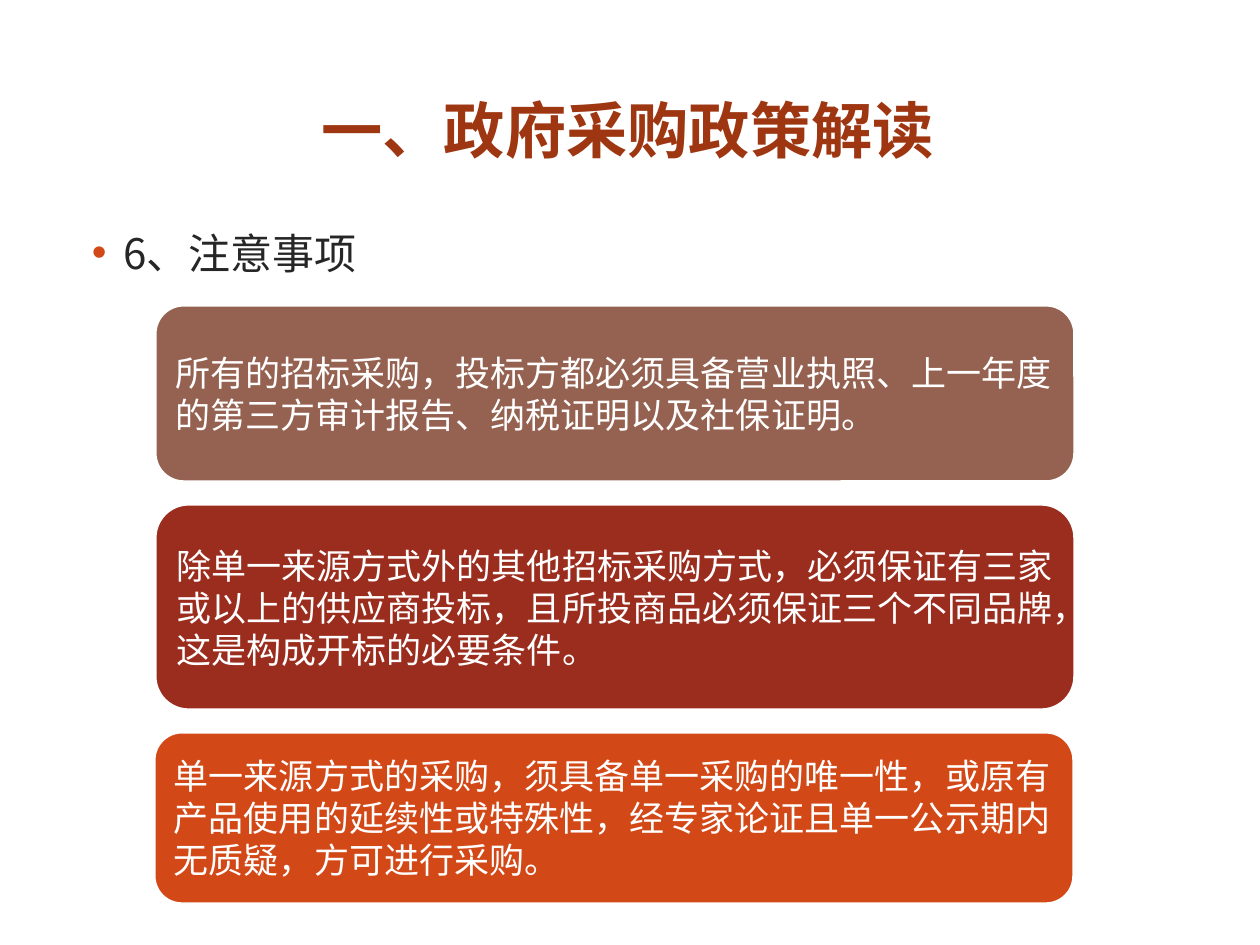
from dataclasses import dataclass

import pptx
import pptx.dml.color
import pptx.enum.shapes
import pptx.enum.text
import pptx.oxml.ns
import pptx.util
from lxml import etree

RGBColor = pptx.dml.color.RGBColor
PP_ALIGN = pptx.enum.text.PP_ALIGN
ANCHOR = pptx.enum.text.MSO_ANCHOR
SHAPE = pptx.enum.shapes.MSO_SHAPE
qn = pptx.oxml.ns.qn

EMU_PER_PX = 914400 / 126
FONT = "Noto Sans CJK SC"
WHITE = RGBColor(0xFF, 0xFF, 0xFF)
RUST = RGBColor(0x9E, 0x36, 0x11)
INK = RGBColor(0x26, 0x26, 0x26)
ORANGE = RGBColor(0xD3, 0x48, 0x17)
BROWN = RGBColor(0x95, 0x62, 0x51)
CRIMSON = RGBColor(0x9B, 0x2D, 0x1F)


@dataclass
class Panel:
    left: int
    top: int
    width: int
    height: int
    kind: SHAPE = SHAPE.RECTANGLE
    opacity: int = 100


@dataclass
class Notice:
    left: int
    top: int
    height: int
    fill: RGBColor
    text: str


PANELS = [
    Panel(13, 14, 1235, 918, kind=SHAPE.ROUNDED_RECTANGLE),
    Panel(38, 38, 1184, 183, opacity=83),
    Panel(52, 52, 1155, 154),
]
PAGE_CORNER = 0.02

NOTICES = [
    Notice(154, 304, 179, BROWN,
           "所有的招标采购，投标方都必须具备营业执照、上一年度的第三方审计报告、"
           "纳税证明以及社保证明。"),
    Notice(154, 503, 208, CRIMSON,
           "除单一来源方式外的其他招标采购方式，必须保证有三家或以上的供应商投标，"
           "且所投商品必须保证三个不同品牌，这是构成开标的必要条件。"),
    Notice(153, 731, 174, ORANGE,
           "单一来源方式的采购，须具备单一采购的唯一性，或原有产品使用的延续性或特殊性，"
           "经专家论证且单一公示期内无质疑，方可进行采购。"),
]
NOTICE_WIDTH = 922


def px(length: int) -> int:
    return round(length * EMU_PER_PX)


def place(shape, left: int, top: int, width: int, height: int) -> None:
    shape.left, shape.top = px(left), px(top)
    shape.width, shape.height = px(width), px(height)


def style(paragraph, size: int, color: RGBColor, align, bold: bool = False) -> None:
    paragraph.alignment = align
    paragraph.space_before = pptx.util.Pt(0)
    font = paragraph.font
    font.name, font.size, font.bold = FONT, pptx.util.Pt(size), bold
    font.color.rgb = color
    # East Asian typeface follows the Latin one
    latin = paragraph._p.pPr.find(".//" + qn("a:latin"))
    latin.addnext(etree.Element(qn("a:ea"), typeface=FONT))


def add_bullet(paragraph, color: RGBColor) -> None:
    properties = paragraph._p.get_or_add_pPr()
    properties.set("marL", str(pptx.util.Inches(0.38)))
    properties.set("indent", str(pptx.util.Inches(-0.25)))
    bullet_color = etree.SubElement(properties, qn("a:buClr"))
    etree.SubElement(bullet_color, qn("a:srgbClr"), val=str(color))
    etree.SubElement(properties, qn("a:buChar"), char="•")


def add_filled(slide, kind, left: int, top: int, width: int, height: int,
               fill: RGBColor):
    shape = slide.shapes.add_shape(kind, px(left), px(top), px(width), px(height))
    shape.shadow.inherit = False
    shape.fill.solid()
    shape.fill.fore_color.rgb = fill
    return shape


def add_panel(slide, panel: Panel, depth: int) -> None:
    shape = add_filled(slide, panel.kind, panel.left, panel.top,
                       panel.width, panel.height, WHITE)
    shape.line.fill.background()
    if panel.kind == SHAPE.ROUNDED_RECTANGLE:
        shape.adjustments[0] = PAGE_CORNER
    if panel.opacity < 100:
        color = shape._element.spPr.find(qn("a:solidFill") + "/" + qn("a:srgbClr"))
        etree.SubElement(color, qn("a:alpha"), val=str(panel.opacity * 1000))
    # Panels lie behind the placeholders
    slide.shapes._spTree.insert(2 + depth, shape._element)


def add_notice(slide, notice: Notice) -> None:
    card = add_filled(slide, SHAPE.ROUNDED_RECTANGLE, notice.left, notice.top,
                      NOTICE_WIDTH, notice.height, notice.fill)
    card.line.color.rgb = WHITE
    card.line.width = pptx.util.Pt(3)
    frame = card.text_frame
    frame.word_wrap = True
    frame.vertical_anchor = ANCHOR.MIDDLE
    frame.text = notice.text
    style(frame.paragraphs[0], 20, WHITE, PP_ALIGN.LEFT)


def main() -> None:
    deck = pptx.Presentation()
    deck.slide_width, deck.slide_height = px(1260), px(945)
    slide = deck.slides.add_slide(deck.slide_layouts[1])

    # Page and title band
    for depth, panel in enumerate(PANELS):
        add_panel(slide, panel, depth)

    # Title
    title = slide.shapes.title
    place(title, 59, 57, 1138, 144)
    title.text_frame.vertical_anchor = ANCHOR.MIDDLE
    title.text_frame.text = "一、政府采购政策解读"
    style(title.text_frame.paragraphs[0], 35, RUST, PP_ALIGN.CENTER, bold=True)

    # Section heading
    body = slide.placeholders[1]
    place(body, 63, 221, 1134, 708)
    body.text_frame.text = "6、注意事项"
    heading = body.text_frame.paragraphs[0]
    add_bullet(heading, ORANGE)
    style(heading, 24, INK, PP_ALIGN.LEFT)

    # Notice cards
    for notice in NOTICES:
        add_notice(slide, notice)

    deck.save("out.pptx")


if __name__ == "__main__":
    main()
